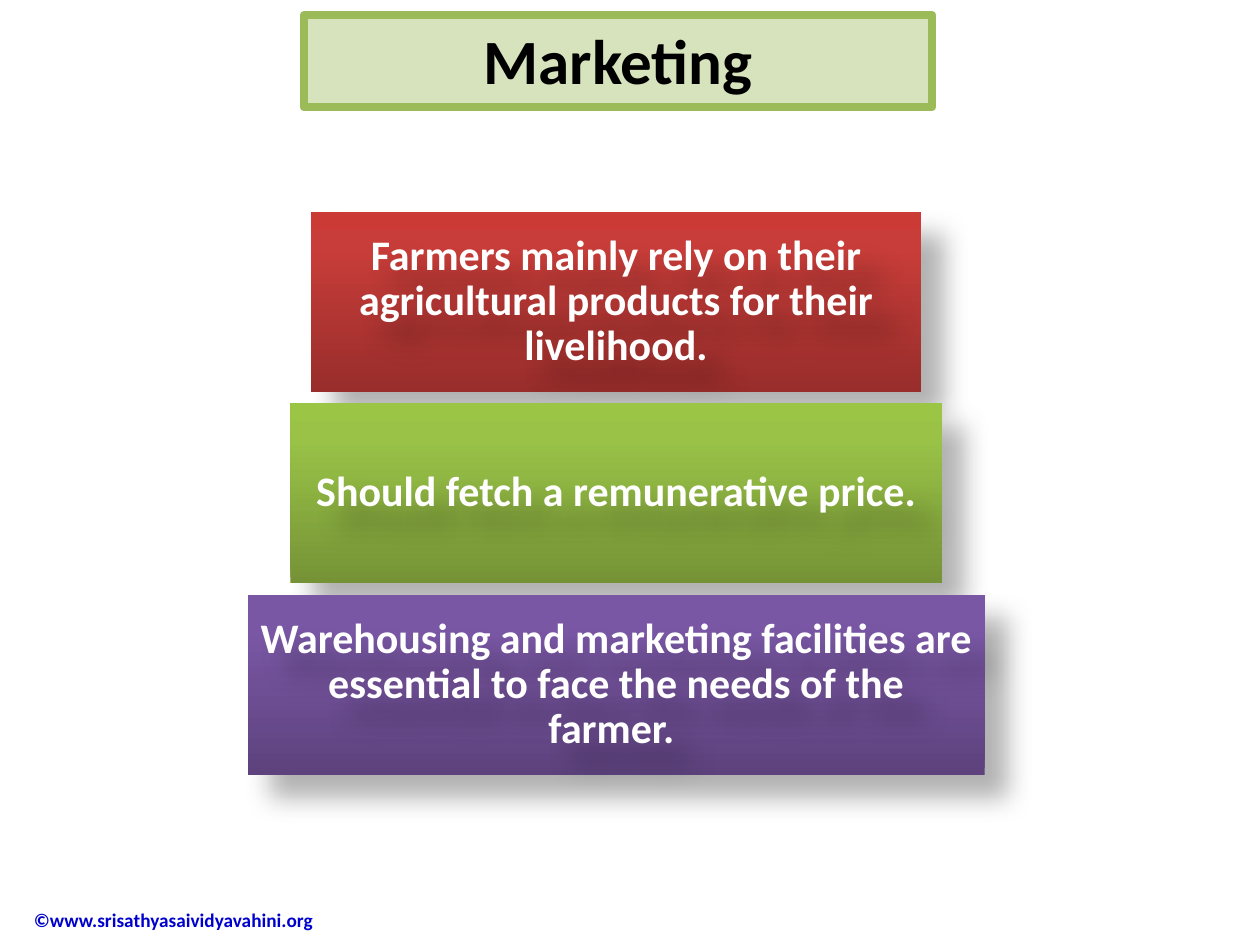
"""Build a slide on marketing with three stacked, shaded boxes."""
from copy import deepcopy

from pptx import Presentation
from pptx.dml.color import RGBColor
from pptx.enum.shapes import MSO_SHAPE
from pptx.enum.text import MSO_ANCHOR, PP_ALIGN
from pptx.oxml import parse_xml
from pptx.oxml.ns import nsdecls
from pptx.util import Inches, Pt

BLACK = RGBColor(0x00, 0x00, 0x00)
WHITE = RGBColor(0xFF, 0xFF, 0xFF)
BLUE = RGBColor(0x00, 0x00, 0xCC)
PALE = RGBColor(0xD6, 0xE3, 0xBC)
GREEN = RGBColor(0x9B, 0xBB, 0x59)
REDS = [RGBColor(0x98, 0x2D, 0x2B), RGBColor(0xC8, 0x3D, 0x39), RGBColor(0xCC, 0x3A, 0x36)]
LIMES = [RGBColor(0x75, 0x93, 0x36), RGBColor(0x99, 0xC2, 0x47), RGBColor(0x9B, 0xC5, 0x45)]
PLUMS = [RGBColor(0x5D, 0x42, 0x7D), RGBColor(0x7A, 0x57, 0xA5), RGBColor(0x7A, 0x56, 0xA7)]

NBSP = chr(160)
SHADOW = (
    f'<a:effectLst {nsdecls("a")}>'
    f'<a:outerShdw blurRad="{Pt(15)}" dist="{Pt(18)}" dir="2700000" algn="tl" rotWithShape="0">'
    '<a:srgbClr val="000000"><a:alpha val="30000"/></a:srgbClr>'
    '</a:outerShdw></a:effectLst>'
)


def style(para, size, color):
    """Set the bold font of a paragraph."""
    font = para.font
    font.name, font.size, font.bold = "Calibri", Pt(size), True
    font.color.rgb = color


def place(shape, left, top, width, height):
    """Move and size a shape, in inches."""
    shape.left, shape.top = Inches(left), Inches(top)
    shape.width, shape.height = Inches(width), Inches(height)


deck = Presentation()
deck.slide_width, deck.slide_height = Inches(10), Inches(7.5)
slide = deck.slides.add_slide(deck.slide_layouts[5])

foot = slide.shapes.add_textbox(0, 0, 0, 0)
place(foot, -0.33, 7.1, 3.02, 0.4)
frame = foot.text_frame
frame.word_wrap = True
frame.vertical_anchor = MSO_ANCHOR.MIDDLE
para = frame.paragraphs[0]
para.text = "©www.srisathyasaividyavahini.org"
para.level = 1
style(para, 11, BLUE)

title = slide.shapes.title
place(title, 2.41, 0.12, 4.99, 0.73)
title.fill.solid()
title.fill.fore_color.rgb = PALE
title.line.color.rgb = GREEN
title.line.width = Pt(4.5)
title.text_frame.vertical_anchor = MSO_ANCHOR.TOP
para = title.text_frame.paragraphs[0]
para.text = "Marketing"
para.alignment = PP_ALIGN.CENTER
style(para, 36, BLACK)

mid, first, pitch, tall = 4.89, 1.68, 1.52, 1.43
rows = [
    (4.84, REDS, "Farmers mainly rely on their agricultural products for their livelihood."),
    (5.17, LIMES, "Should fetch a remunerative price."),
    (5.85, PLUMS, "Warehousing and marketing facilities are essential to face the needs of the farmer." + NBSP),
]
for row, (wide, shades, text) in enumerate(rows):
    box = slide.shapes.add_shape(MSO_SHAPE.RECTANGLE, 0, 0, 0, 0)
    note = slide.shapes.add_textbox(0, 0, 0, 0)
    for part in (box, note):
        place(part, mid - wide / 2, first + row * pitch, wide, tall)
    box.line.fill.background()
    box.fill.gradient()
    box.fill.gradient_angle = 90
    stops = box._element.spPr.xpath(".//a:gsLst")[0]
    stops.append(deepcopy(stops[-1]))
    for stop, share, shade in zip(box.fill.gradient_stops, (0, 0.8, 1), shades):
        stop.position = share
        stop.color.rgb = shade
    for part in (box, note):
        part._element.spPr.append(parse_xml(SHADOW))

    frame = note.text_frame
    frame.word_wrap = True
    frame.vertical_anchor = MSO_ANCHOR.MIDDLE
    frame.margin_left = frame.margin_right = Inches(0.07)
    frame.margin_top = frame.margin_bottom = Inches(0.07)
    para = frame.paragraphs[0]
    para.text = text
    para.alignment = PP_ALIGN.CENTER
    para.line_spacing = 0.9
    style(para, 24, WHITE)
    slide.shapes.add_group_shape([box, note])

deck.save("out.pptx")
